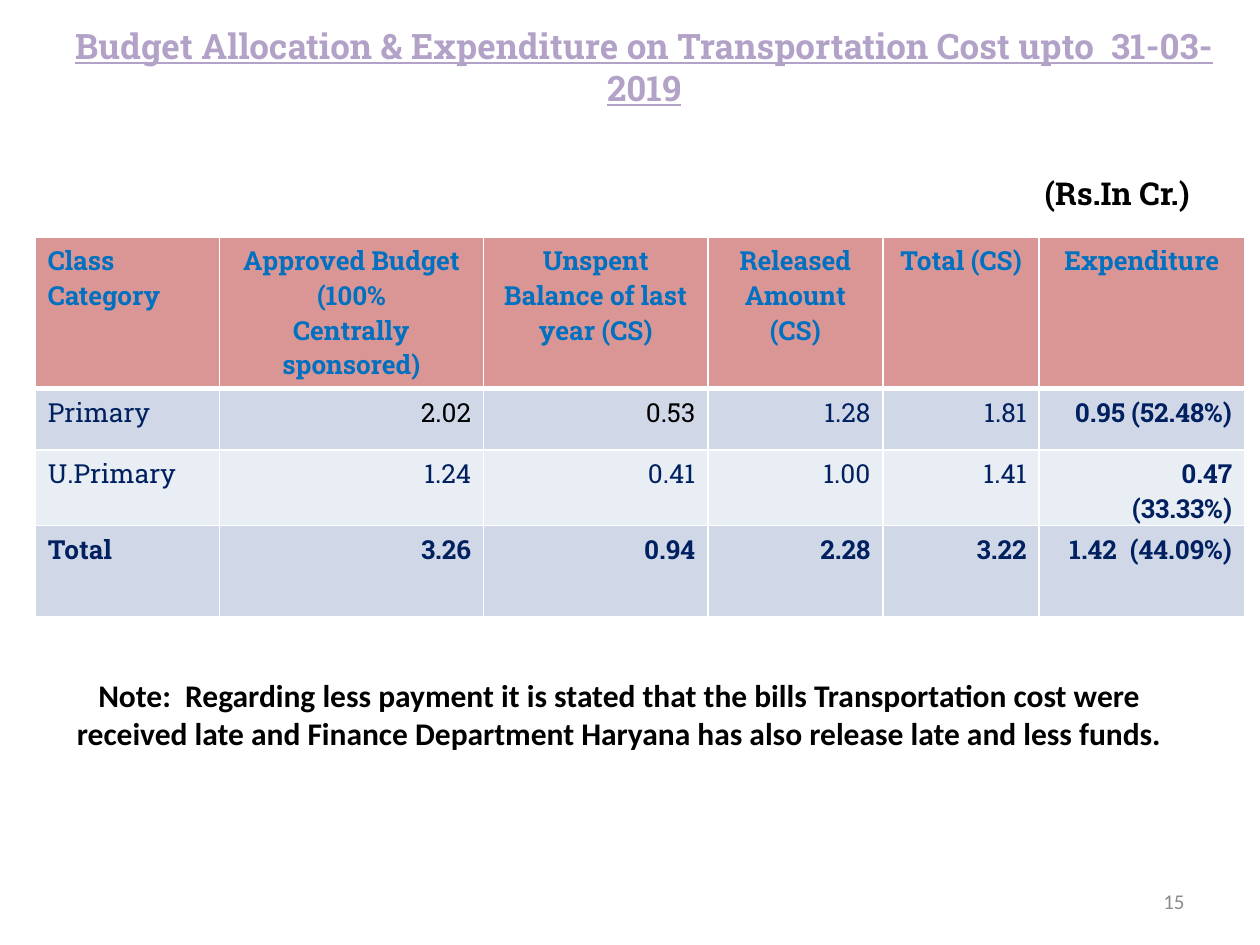
import pptx
import pptx.dml.color
import pptx.enum.text
import pptx.oxml
import pptx.oxml.ns
import pptx.util
from pptx.util import Cm

ALIGN = pptx.enum.text.PP_ALIGN
ANCHOR = pptx.enum.text.MSO_ANCHOR


def colour(value):
    return pptx.dml.color.RGBColor.from_string(value)


class BudgetSlide:
    SLAB, SANS = "Roboto Slab", "Calibri"
    NAVY, BLUE, BLACK = "002060", "0070C0", "000000"
    LILAC, GREY = "B3A2C7", "8C8C8C"
    HEADER_FILL, BAND_FILLS = "D99694", ("D0D8E8", "E9EDF4")

    def __init__(self, deck):
        self.slide = deck.slides.add_slide(deck.slide_layouts[6])

    def set_text(self, frame, text, size, ink, font=SLAB, bold=True,
                 align=ALIGN.LEFT, underline=None):
        """Fill a text frame; each line of text becomes a paragraph."""
        frame.text = text
        for paragraph in frame.paragraphs:
            paragraph.alignment = align
            paragraph.font.name = font
            paragraph.font.size = pptx.util.Pt(size)
            paragraph.font.bold = bold
            paragraph.font.underline = underline
            paragraph.font.color.rgb = colour(ink)

    def text(self, left, top, width, height, text, size, ink,
             anchor=ANCHOR.TOP, **style):
        box = self.slide.shapes.add_textbox(
            Cm(left), Cm(top), Cm(width), Cm(height))
        frame = box.text_frame
        frame.word_wrap = True
        frame.vertical_anchor = anchor
        self.set_text(frame, text, size, ink, **style)
        return frame

    def border(self, cell, bottom):
        """White lines around a cell, with the bottom width in points."""
        properties = cell._tc.get_or_add_tcPr()
        widths = {"lnL": 1, "lnR": 1, "lnT": 1, "lnB": bottom}
        for position, (side, width) in enumerate(widths.items()):
            properties.insert(position, pptx.oxml.parse_xml(
                f'<a:{side} {pptx.oxml.ns.nsdecls("a")} '
                f'w="{pptx.util.Pt(width)}"><a:solidFill>'
                f'<a:srgbClr val="FFFFFF"/></a:solidFill></a:{side}>'))

    def cell_style(self, row, column, last_row):
        """Return the ink, weight and alignment of a table cell."""
        if row == 0:
            return self.BLUE, True, ALIGN.CENTER if column else ALIGN.LEFT
        ink = self.BLACK if row == 1 and column in (1, 2) else self.NAVY
        bold = row == last_row or column == 5
        return ink, bold, ALIGN.RIGHT if column else ALIGN.LEFT

    def table(self, left, top, widths, heights, rows):
        table = self.slide.shapes.add_table(
            len(rows), len(widths), Cm(left), Cm(top),
            Cm(sum(widths)), Cm(sum(heights))).table
        for column, width in zip(table.columns, widths):
            column.width = Cm(width)
        for r, (values, height) in enumerate(zip(rows, heights)):
            table.rows[r].height = Cm(height)
            fill = self.BAND_FILLS[(r - 1) % 2] if r else self.HEADER_FILL
            for c, value in enumerate(values):
                cell = table.cell(r, c)
                cell.fill.solid()
                cell.fill.fore_color.rgb = colour(fill)
                self.border(cell, 1 if r else 3)
                ink, bold, align = self.cell_style(r, c, len(rows) - 1)
                self.set_text(cell.text_frame, value, 15, ink,
                              bold=bold, align=align)


def main():
    deck = pptx.Presentation()
    deck.slide_width, deck.slide_height = Cm(25.4), Cm(19.05)
    budget = BudgetSlide(deck)

    title = budget.text(
        0.58, 0.5, 24.82, 2.5,
        "Budget Allocation & Expenditure on Transportation Cost upto  "
        "31-03-2019",
        20, budget.LILAC, align=ALIGN.CENTER, underline=True)
    title.margin_top = 0

    budget.text(18.21, 17.65, 5.92, 1.02, "15", 12, budget.GREY,
                anchor=ANCHOR.MIDDLE, font=budget.SANS, bold=False,
                align=ALIGN.RIGHT)

    budget.table(
        0.71, 4.78,
        widths=[3.71, 5.33, 4.52, 3.53, 3.15, 4.14],
        heights=[3.05, 1.24, 1.42, 1.83],
        rows=[
            ["Class Category",
             "Approved Budget\v(100%\vCentrally sponsored)",
             "Unspent Balance of last year (CS)", "Released Amount (CS)",
             "Total (CS)", "Expenditure"],
            ["Primary", "2.02", "0.53", "1.28", "1.81", "0.95 (52.48%)"],
            ["U.Primary", "1.24", "0.41", "1.00", "1.41",
             "0.47\n(33.33%)"],
            ["Total", "3.26", "0.94", "2.28", "3.22", "1.42  (44.09%)"],
        ])

    unit = budget.text(19.89, 3.38, 5.28, 1.02, "(Rs.In Cr.)", 18,
                       budget.BLACK)
    unit.margin_left = Cm(1.17)

    budget.text(
        0.64, 13.51, 23.7, 1.8,
        "Note:  Regarding less payment it is stated that the bills "
        "Transportation cost were received late and Finance Department "
        "Haryana has also release late and less funds.",
        18, budget.BLACK, font=budget.SANS, align=ALIGN.CENTER)

    deck.save("out.pptx")


if __name__ == "__main__":
    main()
